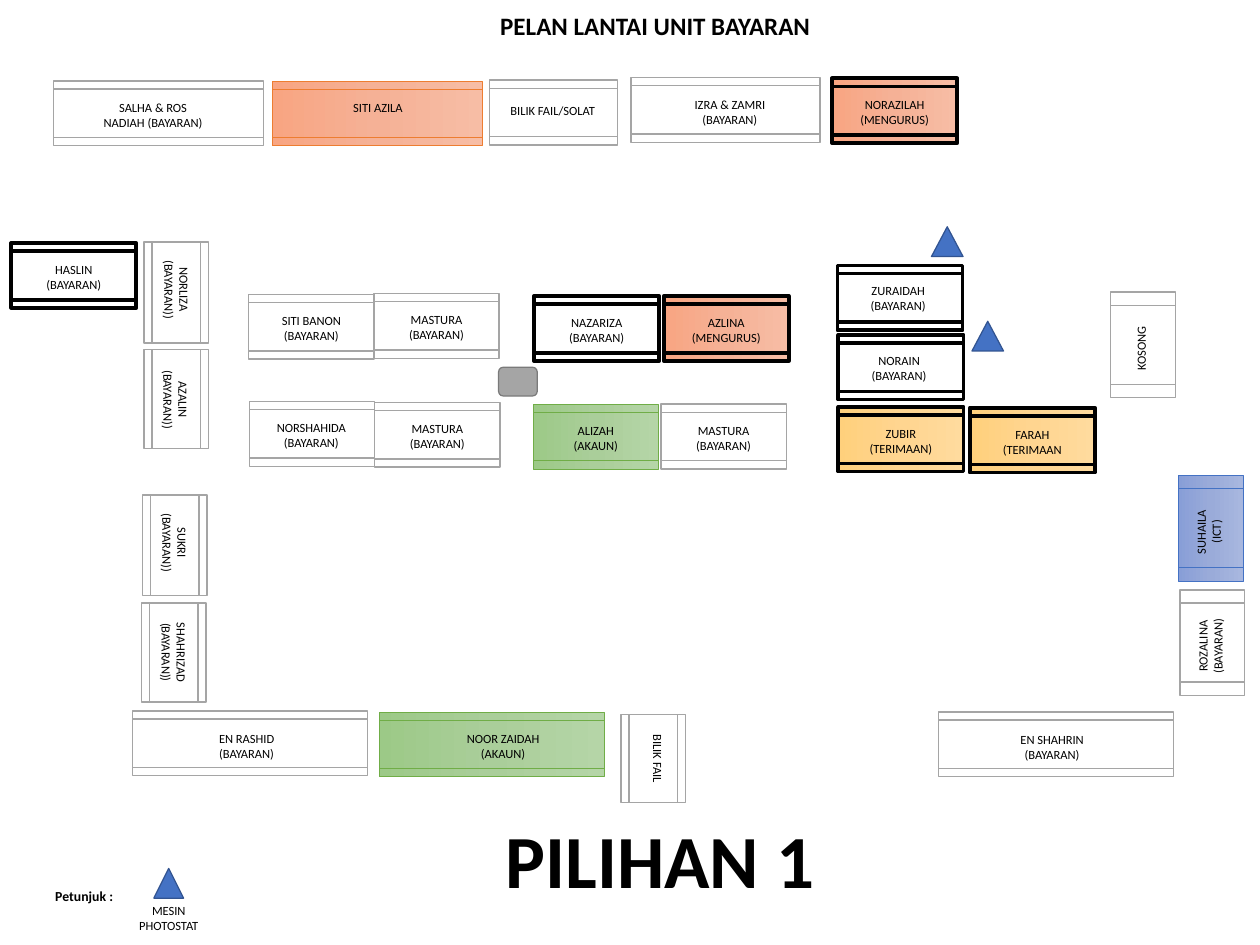
from copy import deepcopy

from pptx import Presentation
from pptx.dml.color import RGBColor
from pptx.enum.shapes import MSO_SHAPE
from pptx.enum.text import MSO_ANCHOR, MSO_AUTO_SIZE, PP_ALIGN
from pptx.oxml.ns import qn
from pptx.util import Inches, Pt

DESK = MSO_SHAPE.FLOWCHART_PREDEFINED_PROCESS
TRIANGLE = MSO_SHAPE.ISOSCELES_TRIANGLE
ROUNDED = MSO_SHAPE.ROUNDED_RECTANGLE
CENTER, LEFT = PP_ALIGN.CENTER, PP_ALIGN.LEFT
TOP = MSO_ANCHOR.TOP
FIT_TEXT = MSO_AUTO_SIZE.SHAPE_TO_FIT_TEXT

GREEN = ("B5D5A7", "AACE9A", "9CC987")
ORANGE = ("F7BDA5", "F5B196", "F8A582")
GOLD = ("FFDB9E", "FFD590", "FFD07C")
BLUE = ("A8B7DF", "9AABD9", "889ED7")
WHITE = ("FFFFFF",)
THEME = {
    "font": "Calibri", "text": "000000",
    "title": 20, "option": 60, "legend": 11, "label": 10,
    # Shape styles: fill colours, line colour, line width
    "plain": (WHITE, "A5A5A5", 1),
    "bold": (WHITE, "000000", 3),
    "account": (GREEN, "70AD47", 0.5),
    "file": (ORANGE, "ED7D31", 0.5),
    "manage": (ORANGE, "000000", 3),
    "receive": (GOLD, "000000", 3),
    "ict": (BLUE, "4472C4", 0.5),
    "copier": (("4472C4",), "325491", 1),
    "pillar": (("A5A5A5",), "7A7A7A", 1),
}
DEPTH = 0.72


def paint(shape, style):
    colors, line_color, line_width = THEME[style]
    shape.shadow.inherit = False
    shape.line.color.rgb = RGBColor.from_string(line_color)
    shape.line.width = Pt(line_width)
    if len(colors) == 1:
        shape.fill.solid()
        shape.fill.fore_color.rgb = RGBColor.from_string(colors[0])
        return
    shape.fill.gradient()
    shape.fill.gradient_angle = 270
    stops = shape._element.spPr.find(".//" + qn("a:gsLst"))
    stops.insert(1, deepcopy(stops[0]))
    for index, (stop, color) in enumerate(zip(shape.fill.gradient_stops, colors)):
        stop.position = index / 2
        stop.color.rgb = RGBColor.from_string(color)


def write_text(shape, text, size="label", bold=False, align=CENTER, wrap=True):
    frame = shape.text_frame
    frame.text = text
    frame.word_wrap = wrap
    frame.vertical_anchor = TOP
    frame.auto_size = FIT_TEXT
    for paragraph in frame.paragraphs:
        paragraph.alignment = align
        paragraph.line_spacing = 1.0
        paragraph.space_before = Pt(0)
        paragraph.font.name = THEME["font"]
        paragraph.font.size = Pt(THEME[size])
        paragraph.font.bold = bold
        paragraph.font.color.rgb = RGBColor.from_string(THEME["text"])


presentation = Presentation()
presentation.slide_width, presentation.slide_height = Inches(14), Inches(10.5)
slide = presentation.slides.add_slide(presentation.slide_layouts[5])
shapes = slide.shapes

# Title
title = shapes.title
title.left, title.top = Inches(4.94), Inches(0.07)
title.width, title.height = Inches(4.68), Inches(0.44)
write_text(title, "PELAN LANTAI UNIT BAYARAN", size="title", bold=True)

# Desks by the way they face: shape turn, label turn, and then for each desk
# label, style, centre x, centre y, length, label shift x and y
facings = [
    (90, 0, [
        # Top row
        ("SALHA & ROS NADIAH (BAYARAN)", "plain", 1.76, 1.26, 2.33, -0.06, 0.02),
        ("SITI AZILA", "file", 4.19, 1.26, 2.33, 0.01, -0.06),
        ("BILIK FAIL/SOLAT", "plain", 6.15, 1.25, 1.42, -0.01, -0.02),
        ("IZRA & ZAMRI\n(BAYARAN)", "plain", 8.06, 1.22, 2.1, 0.05, 0.03),
        ("NORAZILAH\n(MENGURUS)", "manage", 9.94, 1.23, 1.39, 0, 0.02),
        # Middle blocks
        ("HASLIN\n(BAYARAN)", "bold", 0.82, 3.06, 1.39, 0, 0.02),
        ("SITI BANON\n(BAYARAN)", "plain", 3.46, 3.63, 1.39, 0, 0.02),
        ("NORSHAHIDA\n(BAYARAN)", "plain", 3.47, 4.82, 1.39, -0.01, 0.02),
        ("MASTURA\n(BAYARAN)", "plain", 4.85, 3.62, 1.39, 0, 0.02),
        ("MASTURA\n(BAYARAN)", "plain", 4.86, 4.83, 1.39, 0, 0.02),
        ("NAZARIZA\n(BAYARAN)", "bold", 6.63, 3.65, 1.39, 0, 0.02),
        ("ALIZAH\n(AKAUN)", "account", 6.62, 4.85, 1.39, 0, 0.02),
        ("AZLINA\n(MENGURUS)", "manage", 8.07, 3.65, 1.39, 0, 0.02),
        ("MASTURA\n(BAYARAN)", "plain", 8.04, 4.85, 1.39, 0, 0.02),
        ("ZURAIDAH\n(BAYARAN)", "bold", 10, 3.31, 1.39, -0.02, 0.01),
        ("NORAIN\n(BAYARAN)", "bold", 10.01, 4.08, 1.39, -0.02, 0.01),
        ("ZUBIR\n(TERIMAAN)", "receive", 10.01, 4.88, 1.39, 0, 0.02),
        ("FARAH\n(TERIMAAN", "receive", 11.47, 4.89, 1.39, 0, 0.02),
        # Bottom row
        ("EN RASHID\n(BAYARAN)", "plain", 2.78, 8.26, 2.61, -0.04, 0.03),
        ("NOOR ZAIDAH\n(AKAUN)", "account", 5.46, 8.27, 2.5, 0.13, 0.02),
        ("EN SHAHRIN\n(BAYARAN)", "plain", 11.73, 8.27, 2.61, -0.04, 0.03),
    ]),
    (180, 90, [
        ("NORLIZA\n(BAYARAN))", "plain", 1.96, 3.25, 1.12, 0, -0.03),
        ("AZALIN\n(BAYARAN))", "plain", 1.96, 4.43, 1.1, -0.01, 0.01),
        ("SUKRI\n(BAYARAN))", "plain", 1.94, 6.06, 1.12, 0, -0.03),
        ("SHAHRIZAD\n(BAYARAN))", "plain", 1.93, 7.25, 1.1, 0, 0),
        ("BILIK FAIL", "plain", 7.26, 8.43, 0.98, 0.05, 0),
    ]),
    (90, 270, [
        ("KOSONG", "plain", 12.7, 3.83, 1.17, -0.02, 0.04),
        ("SUHAILA\n(ICT)", "ict", 13.45, 5.87, 1.17, -0.02, 0.04),
        ("ROZALINA\n(BAYARAN)", "plain", 13.47, 7.14, 1.17, -0.02, 0.04),
    ]),
]
for desk_turn, label_turn, desks in facings:
    for text, style, x, y, length, shift_x, shift_y in desks:
        width, height = (length, DEPTH) if label_turn == 270 else (DEPTH, length)
        desk = shapes.add_shape(DESK, Inches(x - width / 2), Inches(y - height / 2),
                                Inches(width), Inches(height))
        desk.rotation = desk_turn
        paint(desk, style)

        # Long one-paragraph names need a wider label
        label_width = 1.39 if len(text.split("\n")[0]) > 12 else 1.1
        label_height = 0.44 if "\n" in text or len(text) > 20 else 0.27
        label = shapes.add_textbox(Inches(x + shift_x - label_width / 2),
                                   Inches(y + shift_y - label_height / 2),
                                   Inches(label_width), Inches(label_height))
        label.rotation = label_turn
        write_text(label, text)

# Photocopiers, the legend's marker and the pillar
for kind, style, left, top, width, height in [
    (TRIANGLE, "copier", 10.8, 3.57, 0.35, 0.33),
    (TRIANGLE, "copier", 10.35, 2.52, 0.35, 0.33),
    (TRIANGLE, "copier", 1.71, 9.65, 0.33, 0.33),
    (ROUNDED, "pillar", 5.54, 4.08, 0.43, 0.32),
]:
    marker = shapes.add_shape(kind, Inches(left), Inches(top), Inches(width), Inches(height))
    paint(marker, style)

# Legend and option name
for text, left, top, width, height, text_format in [
    ("Petunjuk :", 0.29, 9.81, 1.29, 0.29, {"size": "legend", "bold": True}),
    ("MESIN PHOTOSTAT", 1.32, 9.98, 1.11, 0.44, {}),
    ("PILIHAN 1", 5.52, 8.99, 3.67, 1.11,
     {"size": "option", "bold": True, "align": LEFT, "wrap": False}),
]:
    caption = shapes.add_textbox(Inches(left), Inches(top), Inches(width), Inches(height))
    write_text(caption, text, **text_format)

presentation.save("out.pptx")
